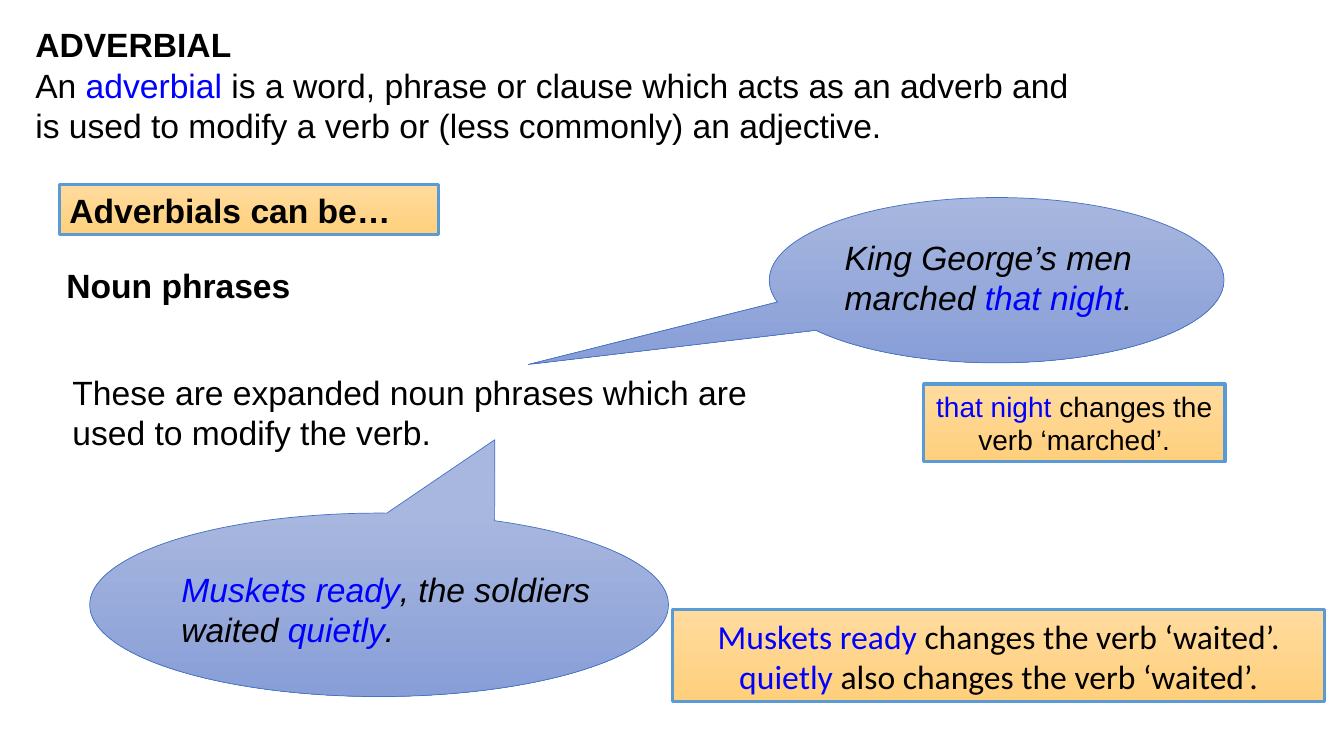
import pptx
import pptx.dml.color
import pptx.enum.shapes
import pptx.enum.text
import pptx.util
from dataclasses import dataclass

PX = 9144  # EMU in one px, 100 px to the inch


@dataclass(frozen=True)
class Theme:
    text: str = "000000"
    highlight: str = "0000FF"
    orange: tuple = ("FFDB9E", "FFD07C")
    orange_line: str = "5B9BD5"
    blue: tuple = ("A8B7DF", "889ED7")
    blue_line: str = "4472C4"
    font: str = "Arial"
    alternate_font: str = "Calibri"
    body_size: int = 24
    note_size: int = 20


THEME = Theme()
SHAPES = pptx.enum.shapes.MSO_SHAPE
LEFT = pptx.enum.text.PP_ALIGN.LEFT
CENTER = pptx.enum.text.PP_ALIGN.CENTER


def color(value):
    return pptx.dml.color.RGBColor.from_string(value)


def px(*lengths):
    return [pptx.util.Emu(length * PX) for length in lengths]


def write_paragraph(paragraph, text, size=THEME.body_size, font=THEME.font,
                    bold=False, italic=False, align=LEFT):
    """Write text, colouring the parts between asterisks as highlights."""
    paragraph.alignment = align
    paragraph.font.size = pptx.util.Pt(size)
    paragraph.font.name = font
    paragraph.font.bold = bold
    paragraph.font.italic = italic
    paragraph.font.color.rgb = color(THEME.text)
    for index, part in enumerate(text.split("*")):
        if part:
            run = paragraph.add_run()
            run.text = part
            if index % 2:
                run.font.color.rgb = color(THEME.highlight)


def write_lines(shape, lines, **style):
    frame = shape.text_frame
    frame.word_wrap = True
    for index, line in enumerate(lines):
        paragraph = frame.add_paragraph() if index else frame.paragraphs[0]
        write_paragraph(paragraph, line, **style)


def add_heading(slide, box, heading, definition):
    title = slide.shapes.title
    title.left, title.top, title.width, title.height = px(*box)
    frame = title.text_frame
    frame.word_wrap = True
    frame.auto_size = pptx.enum.text.MSO_AUTO_SIZE.NONE
    frame.vertical_anchor = pptx.enum.text.MSO_ANCHOR.TOP
    write_paragraph(frame.paragraphs[0], heading, bold=True)
    write_paragraph(frame.add_paragraph(), definition)


def add_text(slide, box, text, **style):
    write_lines(slide.shapes.add_textbox(*px(*box)), [text], **style)


def add_gradient_shape(slide, kind, box, stops, line, line_width):
    shape = slide.shapes.add_shape(kind, *px(*box))
    shape.shadow.inherit = False
    shape.fill.gradient()
    shape.fill.gradient_angle = 270  # top to bottom
    for stop, value in zip(shape.fill.gradient_stops, stops):
        stop.color.rgb = color(value)
    shape.line.color.rgb = color(line)
    shape.line.width = pptx.util.Pt(line_width)
    return shape


def add_label(slide, box, lines, **style):
    label = add_gradient_shape(slide, SHAPES.RECTANGLE, box,
                               THEME.orange, THEME.orange_line, 2.25)
    write_lines(label, lines, **style)


def add_callout(slide, box, pointer, text_box, text):
    callout = add_gradient_shape(slide, SHAPES.OVAL_CALLOUT, box,
                                 THEME.blue, THEME.blue_line, 0.5)
    for index, offset in enumerate(pointer):
        callout.adjustments[index] = offset
    add_text(slide, text_box, text, italic=True)


def main():
    presentation = pptx.Presentation()
    presentation.slide_width, presentation.slide_height = px(1333, 750)
    slide = presentation.slides.add_slide(presentation.slide_layouts[5])

    # Definition
    add_heading(slide, (25, 19, 1068, 131), "ADVERBIAL",
                "An *adverbial* is a word, phrase or clause which acts as an "
                "adverb and is used to modify a verb or (less commonly) an "
                "adjective.")

    # Kind of adverbial
    add_label(slide, (59, 183, 376, 50), ["Adverbials can be…"], bold=True)
    add_text(slide, (56, 258, 282, 50), "Noun phrases", bold=True)
    add_text(slide, (62, 364, 750, 91),
             "These are expanded noun phrases which are used to modify the "
             "verb.")

    # First example
    add_callout(slide, (763, 196, 451, 164), (-1.03, 0.51),
                (828, 230, 370, 91),
                "King George’s men marched *that night*.")
    add_label(slide, (916, 381, 299, 77),
              ["*that night *changes the verb ‘marched’."],
              size=THEME.note_size, align=CENTER)

    # Second example
    add_callout(slide, (89, 509, 574, 182), (0.2, -0.9),
                (170, 559, 449, 91),
                "*Muskets ready*, the soldiers waited *quietly*.")
    add_label(slide, (667, 605, 647, 91),
              ["*Muskets ready *changes the verb ‘waited’.",
               "*quietly *also changes the verb ‘waited’."],
              font=THEME.alternate_font, align=CENTER)

    presentation.save("out.pptx")


if __name__ == "__main__":
    main()
